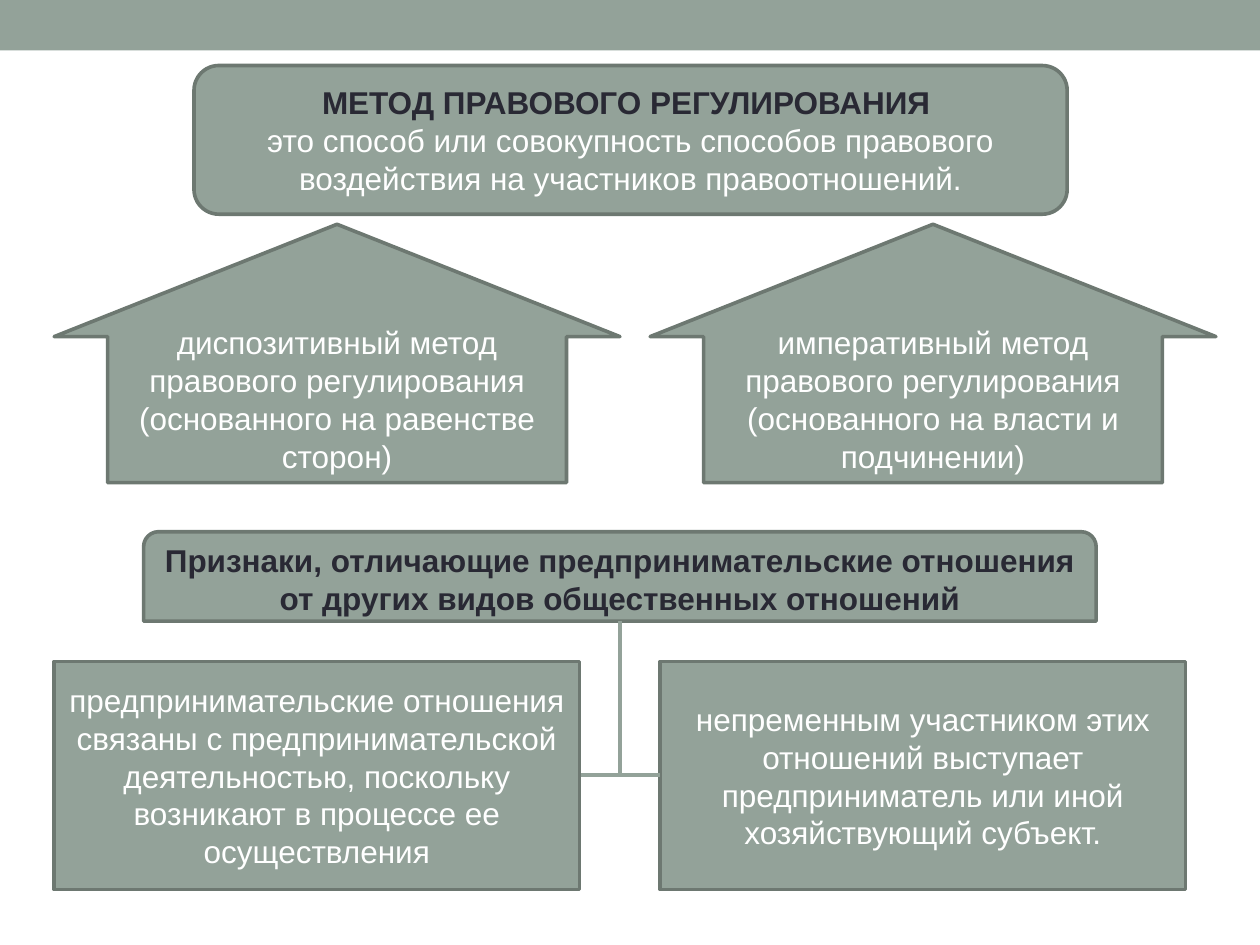
from lxml import etree
from pptx import Presentation
from pptx.dml.color import RGBColor
from pptx.enum import shapes, text
from pptx.oxml.ns import qn
from pptx.util import Inches, Pt

SAGE = RGBColor(0x93, 0xA2, 0x99)
EDGE = RGBColor(0x6D, 0x78, 0x71)
DARK = RGBColor(0x29, 0x29, 0x34)
WHITE = RGBColor(0xFF, 0xFF, 0xFF)
KIND = shapes.MSO_SHAPE

deck = Presentation()
deck.slide_width, deck.slide_height = Inches(10), Inches(7.5)
slide = deck.slides.add_slide(deck.slide_layouts[6])


def add_box(kind, left, top, width, height, *paras):
    """Add an outlined box; each paragraph is (words, bold heading or not)."""
    box = slide.shapes.add_shape(
        kind, Inches(left), Inches(top), Inches(width), Inches(height))
    box.shadow.inherit = False
    box.fill.solid()
    box.fill.fore_color.rgb = SAGE
    box.line.color.rgb = EDGE
    box.line.width = Pt(2.08)
    frame = box.text_frame
    frame.word_wrap = True
    frame.vertical_anchor = text.MSO_ANCHOR.MIDDLE
    for i, (words, head) in enumerate(paras):
        para = frame.add_paragraph() if i else frame.paragraphs[0]
        para.alignment = text.PP_ALIGN.CENTER
        run = para.add_run()
        run.text = words
        run.font.name = "Arial"
        run.font.size = Pt(18)
        run.font.bold = head
        run.font.color.rgb = DARK if head else WHITE
    return box


# Top band
band = add_box(KIND.RECTANGLE, 0, 0, 10, 0.4)
band.line.fill.background()

# Definition
add_box(KIND.ROUNDED_RECTANGLE, 1.54, 0.52, 6.93, 1.18,
        ("МЕТОД ПРАВОВОГО РЕГУЛИРОВАНИЯ ", True),
        ("это способ или совокупность способов правового воздействия "
         "на участников правоотношений.", False))

# Two methods, as arrows up to the definition
methods = [
    (0.43, "диспозитивный метод правового регулирования "
           "(основанного на равенстве сторон)"),
    (5.16, "императивный метод правового регулирования "
           "(основанного на власти и подчинении)"),
]
for left, words in methods:
    arrow = add_box(KIND.UP_ARROW, left, 1.78, 4.49, 2.05, (words, False))
    arrow.adjustments[0] = 0.811
    arrow.adjustments[1] = 0.435

# Heading of the features
add_box(KIND.ROUND_2_SAME_RECTANGLE, 1.14, 4.22, 7.56, 0.71,
        ("Признаки, отличающие предпринимательские отношения "
         "от других видов общественных отношений", True))

# Two features
traits = [
    (0.43, "предпринимательские отношения связаны с предпринимательской "
           "деятельностью, поскольку возникают в процессе ее осуществления"),
    (5.24, "непременным участником этих отношений выступает "
           "предприниматель или иной хозяйствующий субъект."),
]
for left, words in traits:
    add_box(KIND.RECTANGLE, left, 5.25, 4.17, 1.81, (words, False))

# Lines from the heading to the features
for ends in [(4.92, 4.93, 4.92, 6.15), (4.61, 6.15, 5.24, 6.15)]:
    link = slide.shapes.add_connector(
        shapes.MSO_CONNECTOR.STRAIGHT, *map(Inches, ends))
    link.line.color.rgb = SAGE
    link.line.width = Pt(2.25)
    etree.SubElement(link._element.spPr, qn("a:effectLst"))

deck.save("out.pptx")
